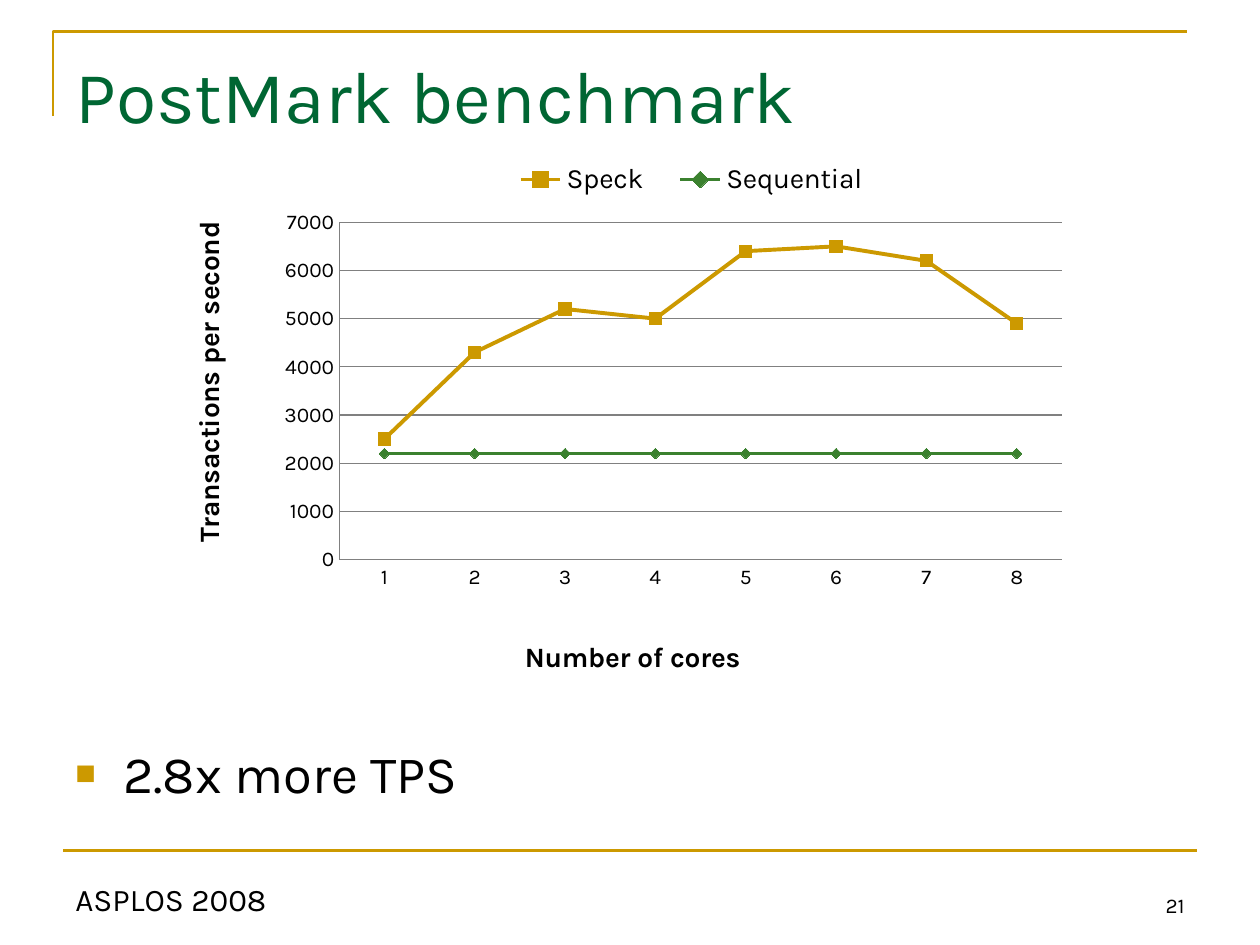
from lxml import etree
from pptx import Presentation
from pptx.chart.data import CategoryChartData
from pptx.dml.color import RGBColor
from pptx.enum.chart import (XL_CHART_TYPE as ChartType, XL_LEGEND_POSITION as LegendPos,
                             XL_MARKER_STYLE as Marker, XL_TICK_MARK as Tick)
from pptx.enum.shapes import MSO_CONNECTOR as Connector
from pptx.enum.text import MSO_ANCHOR as Anchor, PP_ALIGN as Align
from pptx.oxml.ns import qn
from pptx.util import Inches, Pt

FONT = "Karla"
COLORS = {"gold": "CC9900", "title": "006633", "green": "3B812F",
          "text": "000000", "grid": "808080", "paper": "FFFFFF"}
SERIES = [
    ("Speck", [2500, 4300, 5200, 5000, 6400, 6500, 6200, 4900],
     "gold", 2.25, Marker.SQUARE, 7),
    ("Sequential", [2200] * 8, "green", 1.75, Marker.DIAMOND, 6),
]


def rgb(name):
    return RGBColor.from_string(COLORS[name])


def set_font(font, size, color="text", bold=False):
    font.name, font.size, font.bold = FONT, Pt(size), bold
    font.color.rgb = rgb(color)


def set_line(line, color, width):
    line.color.rgb = rgb(color)
    line.width = Pt(width)


def add_text(slide, box, text, size, color="text", align=Align.LEFT, anchor=Anchor.TOP):
    """Place one wrapped line of text in box and return its paragraph."""
    frame = slide.shapes.add_textbox(*map(Inches, box)).text_frame
    frame.word_wrap = True
    frame.vertical_anchor = anchor
    paragraph = frame.paragraphs[0]
    paragraph.alignment = align
    run = paragraph.add_run()
    run.text = text
    set_font(run.font, size, color)
    return paragraph


def add_header(slide, box):
    """Draw the gold corner rule, then the title inside it."""
    left, top, width, height = map(Inches, box)
    builder = slide.shapes.build_freeform(left, top + height)
    builder.add_line_segments([(left, top), (left + width, top)], close=False)
    corner = builder.convert_to_shape()
    corner.shadow.inherit = False
    corner.fill.background()
    set_line(corner.line, "gold", 1.5)
    add_text(slide, (box[0] + 0.08, box[1] + 0.1, box[2], 1.25),
             "PostMark benchmark", 42, "title")


def add_bullet(slide, box, text):
    paragraph = add_text(slide, box, text, 30)
    paragraph.space_before = Pt(6)
    props = paragraph._p.get_or_add_pPr()
    props.set("marL", str(Inches(0.38)))
    props.set("indent", str(-Inches(0.38)))
    color = etree.SubElement(props, qn("a:buClr"))
    etree.SubElement(color, qn("a:srgbClr"), val=COLORS["gold"])
    etree.SubElement(props, qn("a:buSzPct"), val="65000")
    etree.SubElement(props, qn("a:buFont"), typeface="Arial")
    etree.SubElement(props, qn("a:buChar"), char="■")


def add_footer(slide, box):
    left, top, width, height = box
    rule_y = Inches(top - 0.08)
    rule = slide.shapes.add_connector(Connector.STRAIGHT, Inches(left), rule_y,
                                      Inches(left + width), rule_y)
    set_line(rule.line, "gold", 1.5)
    etree.SubElement(rule._element.spPr, qn("a:effectLst"))
    add_text(slide, (left, top, 3.17, height), "ASPLOS 2008", 18, anchor=Anchor.BOTTOM)
    add_text(slide, (left + width - 2.33, top, 2.33, height), "21", 12,
             align=Align.RIGHT, anchor=Anchor.BOTTOM)


def set_layout(element, index, x, y, w=None, h=None, inner=False):
    """Give a chart part a fixed place, in fractions of the chart."""
    for old in element.findall(qn("c:layout")):
        element.remove(old)
    layout = etree.Element(qn("c:layout"))
    manual = etree.SubElement(layout, qn("c:manualLayout"))
    if inner:
        etree.SubElement(manual, qn("c:layoutTarget"), val="inner")
    for mode in ("xMode", "yMode"):
        etree.SubElement(manual, qn(f"c:{mode}"), val="edge")
    for name, value in zip("xywh", (x, y, w, h)):
        if value is not None:
            etree.SubElement(manual, qn(f"c:{name}"), val=str(value))
    element.insert(index, layout)


def set_title(title, text, x, y):
    run = title.text_frame.paragraphs[0].add_run()
    run.text = text
    set_font(run.font, 16, bold=True)
    set_layout(title._element, 1, x, y)


def style_axes(chart):
    for axis in (chart.category_axis, chart.value_axis):
        axis.major_tick_mark = axis.minor_tick_mark = Tick.NONE
        set_font(axis.tick_labels.font, 12)
        set_line(axis.format.line, "grid", 0.75)
    values = chart.value_axis
    values.minimum_scale, values.maximum_scale, values.major_unit = 0, 7000, 1000
    values.has_major_gridlines = True
    set_line(values.major_gridlines.format.line, "grid", 0.75)
    set_title(values.axis_title, "Transactions per second", 0.02, 0.13)
    turn = values.axis_title._element.find(".//" + qn("a:bodyPr"))
    turn.set("rot", "-5400000")
    turn.set("vert", "horz")


def add_benchmark_chart(slide, box):
    data = CategoryChartData()
    data.categories = [str(cores) for cores in range(1, 9)]
    for name, values, *_ in SERIES:
        data.add_series(name, values)
    chart = slide.shapes.add_chart(ChartType.LINE_MARKERS, *map(Inches, box), data).chart
    set_font(chart.font, 10)
    style_axes(chart)
    chart.has_title = True
    set_title(chart.chart_title, "Number of cores", 0.39, 0.91)
    chart.has_legend = True
    chart.legend.position = LegendPos.RIGHT
    chart.legend.include_in_layout = False
    set_font(chart.legend.font, 16)
    set_layout(chart.legend._element, 1, 0.36, 0.01, 0.44, 0.1)
    plot = chart.plots[0]
    plot.vary_by_categories = False
    set_layout(chart._chartSpace.chart.plotArea, 0, 0.19, 0.14, 0.8, 0.63, inner=True)
    for series, (_, _, color, width, marker, size) in zip(plot.series, SERIES):
        series.smooth = False
        set_line(series.format.line, color, width)
        series.marker.style, series.marker.size = marker, size
        series.marker.format.fill.solid()
        series.marker.format.fill.fore_color.rgb = rgb(color)
        series.marker.format.line.color.rgb = rgb(color)


def main():
    deck = Presentation()
    deck.slide_width, deck.slide_height = Inches(10), Inches(7.5)
    slide = deck.slides.add_slide(deck.slide_layouts[6])
    slide.background.fill.solid()
    slide.background.fill.fore_color.rgb = rgb("paper")
    add_header(slide, (0.42, 0.25, 9, 0.67))
    add_bullet(slide, (0.5, 5.83, 9, 0.87), "2.8x more TPS")
    add_footer(slide, (0.5, 6.83, 9, 0.5))
    add_benchmark_chart(slide, (1.33, 1.17, 7.17, 4.25))
    deck.save("out.pptx")


if __name__ == "__main__":
    main()
